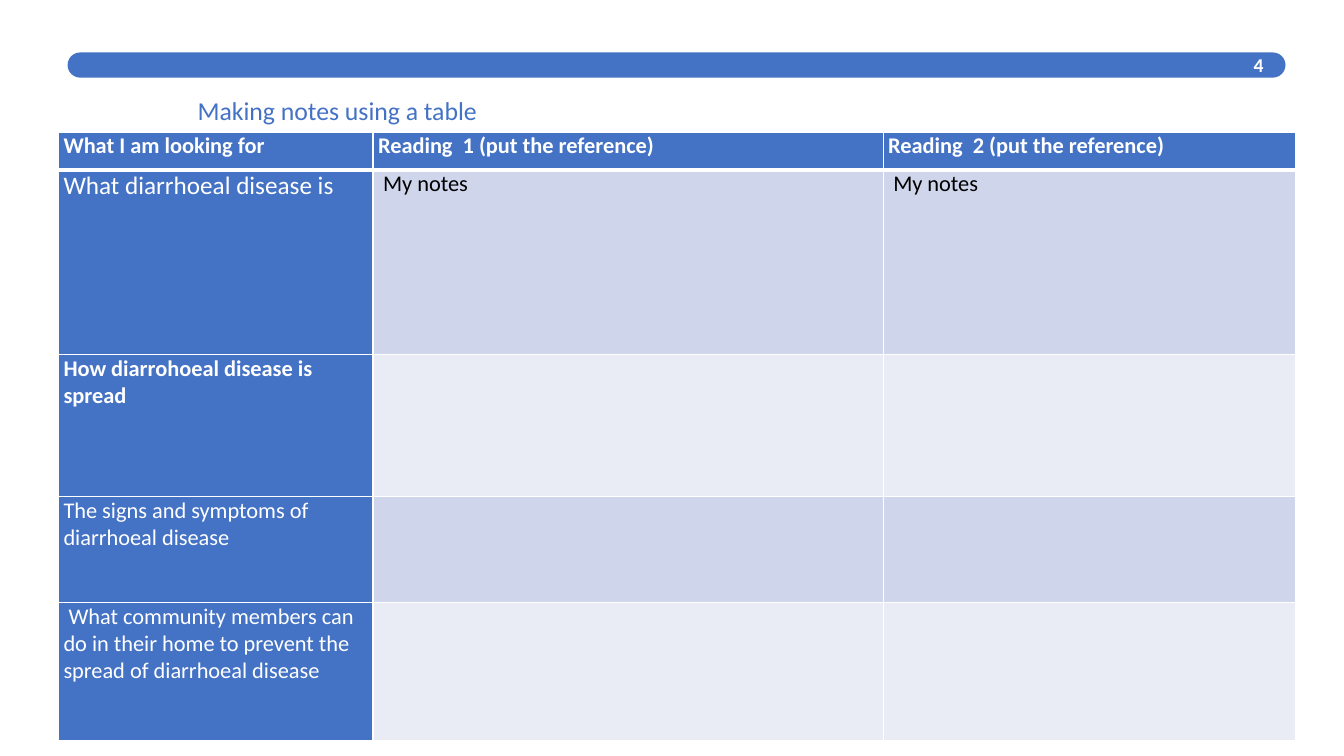
from dataclasses import dataclass

from lxml.etree import SubElement
from pptx import Presentation
from pptx.dml.color import RGBColor as Rgb
from pptx.enum.shapes import MSO_SHAPE as Shape
from pptx.enum.text import MSO_ANCHOR as Anchor, MSO_AUTO_SIZE as Fit, PP_ALIGN as Align
from pptx.oxml.ns import qn
from pptx.util import Inches, Pt


@dataclass(frozen=True)
class Theme:
    font: str = "Calibri"
    blue: str = "4472C4"
    white: str = "FFFFFF"
    black: str = "000000"
    bands: tuple = ("CFD5EA", "E9EBF5")
    title: float = 18.4
    large: float = 18
    body: float = 16
    number: float = 14
    rule: float = 1
    thick: float = 3


THEME = Theme()

HEADS = ["What I am looking for", "Reading  1 (put the reference)",
         "Reading  2 (put the reference)"]
# Topic, size, bold, note under each reading
TOPICS = [
    ("What diarrhoeal disease is", THEME.large, False, " My notes"),
    ("How diarrohoeal disease is spread", THEME.body, True, ""),
    ("The signs and symptoms of diarrhoeal disease", THEME.body, False, ""),
    (" What community members can do in their home to prevent "
     "the spread of diarrhoeal disease", THEME.body, False, ""),
]
COLS = [3.12, 5.06, 4.09]
ROWS = [0.38, 1.83, 1.41, 1.05, 1.37]


def add_run(para, text, size, color, bold=False):
    run = para.add_run()
    run.text = text
    font = run.font
    font.name, font.size, font.bold = THEME.font, Pt(size), bold
    font.color.rgb = Rgb.from_string(color)


def clear_frame(frame):
    frame.margin_left = frame.margin_right = 0
    frame.margin_top = frame.margin_bottom = 0
    frame.word_wrap = True
    frame.auto_size = Fit.NONE


def add_bar(slide, left, top, width, height):
    # Rounded bar with the page number at its right end
    bar = slide.shapes.add_shape(Shape.ROUNDED_RECTANGLE, Inches(left), Inches(top),
                                 Inches(width), Inches(height))
    bar.adjustments[0] = 0.5
    bar.shadow.inherit = False
    bar.fill.solid()
    bar.fill.fore_color.rgb = Rgb.from_string(THEME.blue)
    bar.line.fill.background()

    wide = 0.62
    box = slide.shapes.add_textbox(Inches(left + width - wide - 0.12), Inches(top),
                                   Inches(wide), Inches(height))
    frame = box.text_frame
    clear_frame(frame)
    frame.margin_right = Inches(0.1)
    frame.vertical_anchor = Anchor.MIDDLE
    para = frame.paragraphs[0]
    para.alignment = Align.RIGHT
    add_run(para, "4", THEME.number, THEME.white, True)


def add_title(slide, left, top, width, height):
    title = slide.shapes.title
    title.left, title.top = Inches(left), Inches(top)
    title.width, title.height = Inches(width), Inches(height)
    frame = title.text_frame
    clear_frame(frame)
    frame.vertical_anchor = Anchor.TOP
    para = frame.paragraphs[0]
    para.alignment = Align.LEFT
    para.line_spacing = Pt(34.1)
    add_run(para, "Making notes using a table", THEME.title, THEME.blue)


def set_edges(cell, row):
    # Borders come before the fill; the rule under the header is thick
    props = cell._tc.get_or_add_tcPr()
    widths = {"L": THEME.rule, "R": THEME.rule,
              "T": THEME.thick if row == 1 else THEME.rule,
              "B": THEME.thick if row == 0 else THEME.rule}
    for spot, (side, width) in enumerate(widths.items()):
        line = SubElement(props, qn(f"a:ln{side}"), w=str(Pt(width)))
        fill = SubElement(line, qn("a:solidFill"))
        SubElement(fill, qn("a:srgbClr"), val=THEME.white)
        props.insert(spot, line)


def fill_cell(cell, row, text, size, color, bold, back):
    cell.margin_left = cell.margin_right = Inches(0.05)
    cell.margin_top = cell.margin_bottom = 0
    cell.fill.solid()
    cell.fill.fore_color.rgb = Rgb.from_string(back)
    set_edges(cell, row)
    if text:
        add_run(cell.text_frame.paragraphs[0], text, size, color, bold)


def add_notes(slide, left, top):
    frame = slide.shapes.add_table(len(ROWS), len(COLS), Inches(left), Inches(top),
                                   Inches(sum(COLS)), Inches(sum(ROWS)))
    table = frame.table
    for col, width in zip(table.columns, COLS):
        col.width = Inches(width)
    for row, height in zip(table.rows, ROWS):
        row.height = Inches(height)

    # Header row
    for col, head in enumerate(HEADS):
        fill_cell(table.cell(0, col), 0, head, THEME.body, THEME.white, True, THEME.blue)

    # Topic column and banded note cells
    for row, (topic, size, bold, note) in enumerate(TOPICS, 1):
        fill_cell(table.cell(row, 0), row, topic, size, THEME.white, bold, THEME.blue)
        band = THEME.bands[(row - 1) % 2]
        for col in range(1, len(COLS)):
            fill_cell(table.cell(row, col), row, note, THEME.body, THEME.black, False, band)


def main():
    deck = Presentation()
    deck.slide_width, deck.slide_height = Inches(13.33), Inches(7.5)
    slide = deck.slides.add_slide(deck.slide_layouts[5])
    add_bar(slide, 0.67, 0.52, 12.08, 0.25)
    add_title(slide, 1.96, 0.77, 8.97, 0.37)
    add_notes(slide, 0.58, 1.31)
    deck.save("out.pptx")


if __name__ == "__main__":
    main()
